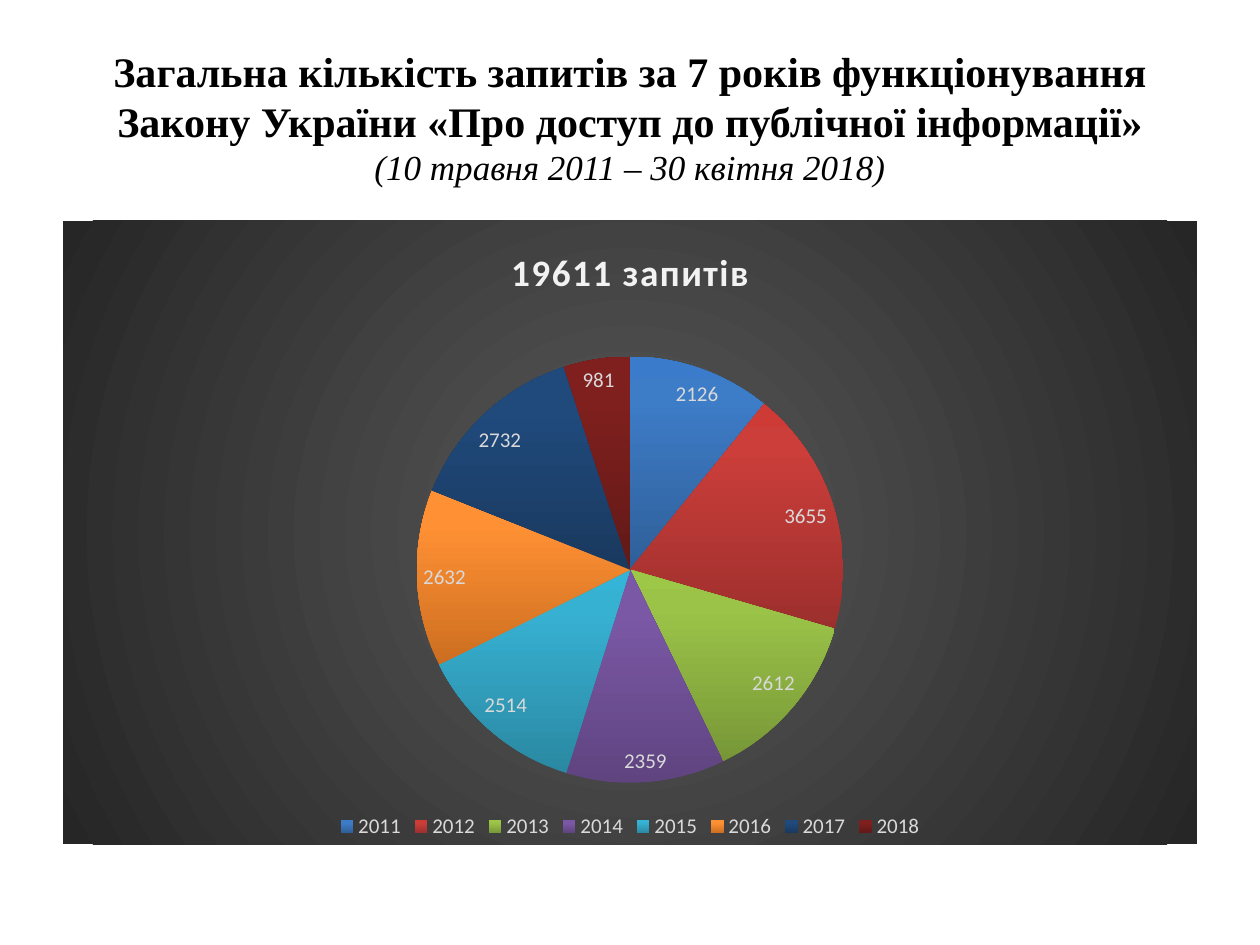
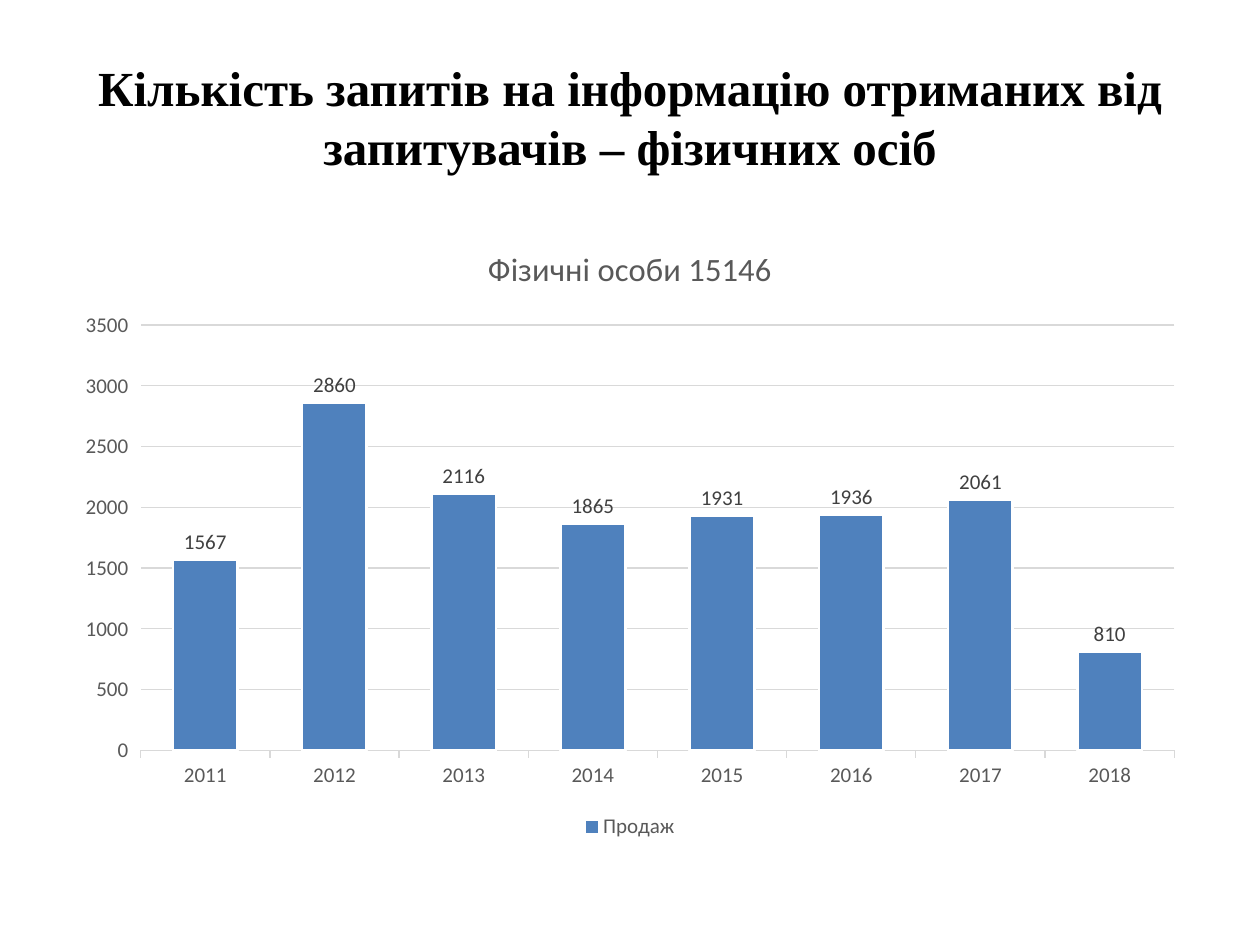
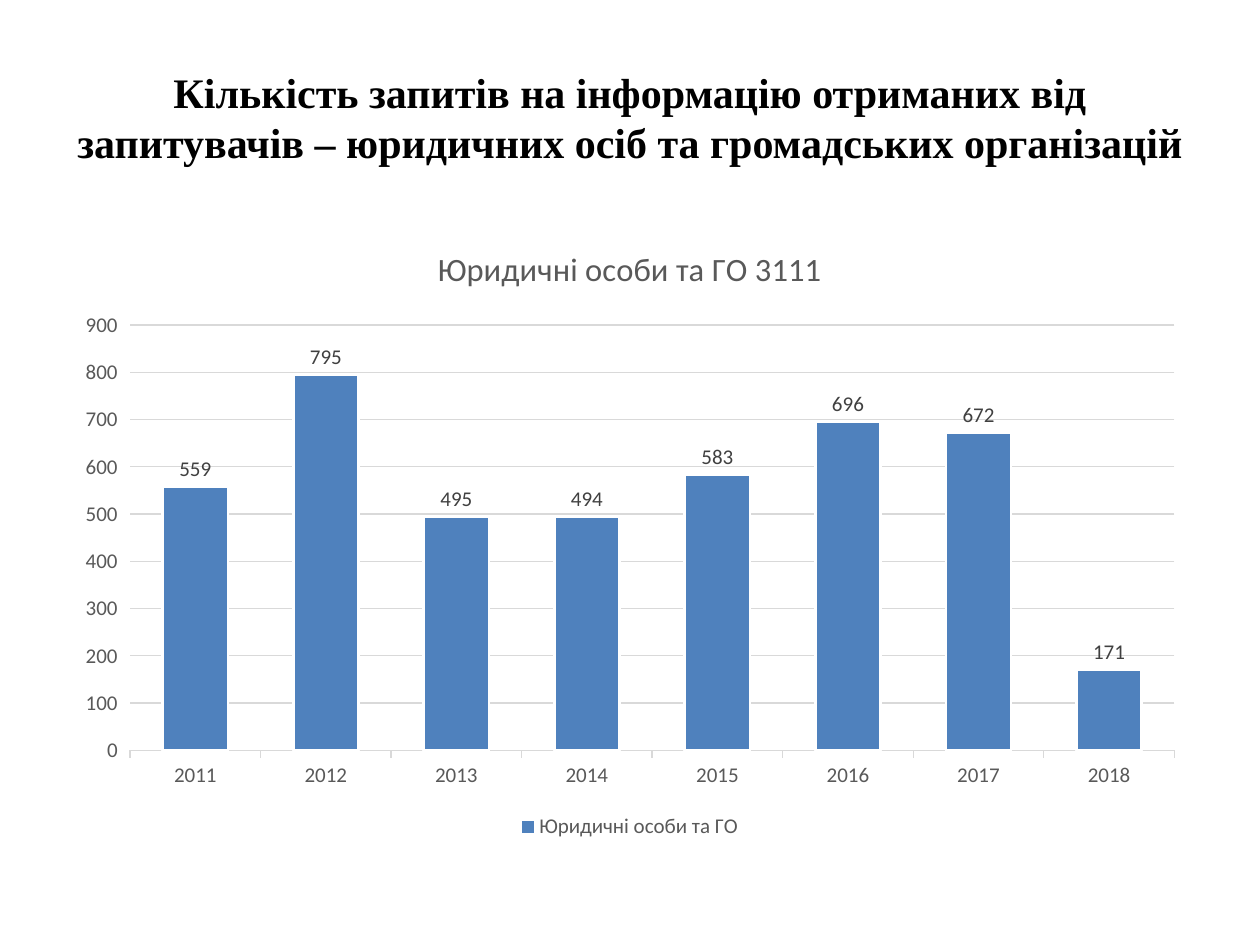
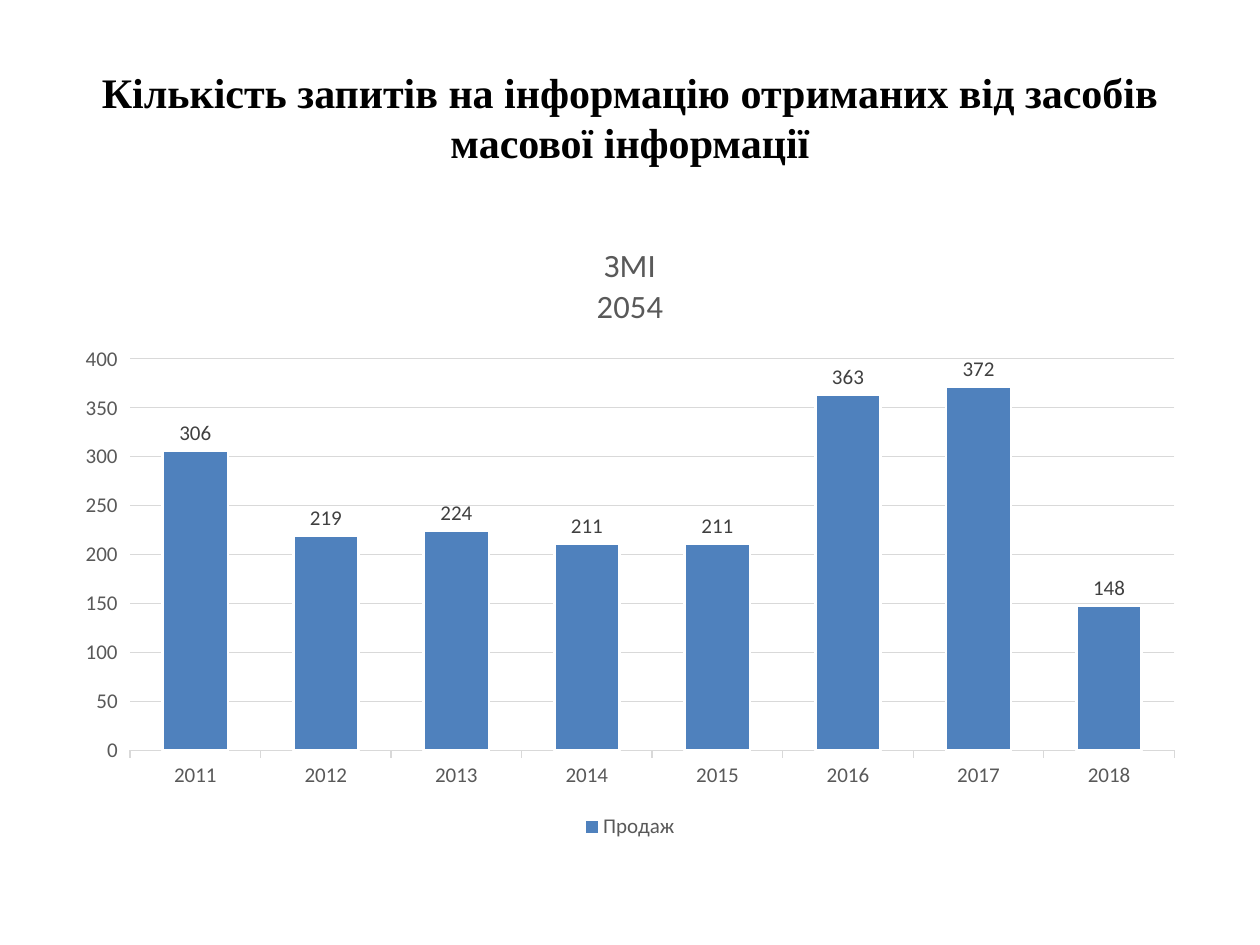
from pptx import Presentation
from pptx.chart.data import CategoryChartData
from pptx.dml.color import RGBColor
from pptx.enum.chart import (XL_CHART_TYPE, XL_LABEL_POSITION,
                             XL_LEGEND_POSITION, XL_TICK_MARK)
from pptx.enum.text import MSO_ANCHOR, PP_ALIGN
from pptx.oxml import parse_xml
from pptx.oxml.ns import nsdecls, qn
from pptx.util import Cm, Pt

HEAD, BODY = "Times New Roman", "Calibri"
BLACK = RGBColor(0, 0, 0)
WHITE = RGBColor(255, 255, 255)
BLUE = RGBColor(0x4F, 0x81, 0xBD)
GRAY = RGBColor(0x59, 0x59, 0x59)
DARK = RGBColor(0x40, 0x40, 0x40)
COAL = RGBColor(0x26, 0x26, 0x26)
RULE = RGBColor(0xD9, 0xD9, 0xD9)
PALE = RGBColor(0xF2, 0xF2, 0xF2)

# Each slice runs from its dark edge through its main tone to its top tone.
SLICES = [[RGBColor.from_string(tone) for tone in row.split()] for row in (
    "2F5F99 3D7CC7 3A7CCB",
    "9C2F2D CB3E3A CE3B37",
    "779737 9BC348 9DC746",
    "5F4480 7B58A6 7C57A8",
    "2A88A2 37B1D2 34B4D6",
    "CC6E20 FF9034 FF9136",
    "19395F 204A7C 1E4A7E",
    "621917 7F201E 811F1C",
)]
STOPS = (0, 80, 100)

YEARS = [str(year) for year in range(2011, 2019)]

TOTAL = {
    "head": "Загальна кількість запитів за 7 років функціонування "
            "Закону України «Про доступ до публічної інформації»",
    "size": 24,
    "dates": "(10 травня 2011 – 30 квітня 2018)",
    "title": ["19611 запитів"],
    "series": "19611 запитів",
    "values": [2126, 3655, 2612, 2359, 2514, 2632, 2732, 981],
}
GROUPS = [
    {
        "head": "Кількість запитів на інформацію отриманих від "
                "запитувачів – фізичних осіб",
        "size": 28,
        "title": ["Фізичні особи 15146"],
        "series": "Продаж",
        "values": [1567, 2860, 2116, 1865, 1931, 1936, 2061, 810],
    },
    {
        "head": "Кількість запитів на інформацію отриманих від запитувачів "
                "– юридичних осіб та громадських організацій",
        "size": 24,
        "title": ["Юридичні особи та ГО 3111"],
        "series": "Юридичні особи та ГО",
        "values": [559, 795, 495, 494, 583, 696, 672, 171],
    },
    {
        "head": "Кількість запитів на інформацію отриманих від засобів "
                "масової інформації",
        "size": 24,
        "title": ["ЗМІ", "2054"],
        "series": "Продаж",
        "values": [306, 219, 224, 211, 211, 363, 372, 148],
    },
]

WIDE, HIGH = Cm(25.4), Cm(19.05)
EDGE = Cm(1.27)
SPAN = WIDE - 2 * EDGE
HEAD_BOX = EDGE, Cm(0.76), SPAN, Cm(3.18)
PLOT_BOX = EDGE, Cm(4.45), SPAN, Cm(12.57)


def style(font, size, color, name=BODY, bold=False, italic=False):
    font.name, font.size = name, Pt(size)
    font.color.rgb = color
    font.bold, font.italic = bold, italic


def blend(stops, shade):
    """Return a gradient fill; shade is its a:lin or a:path element."""
    marks = "".join(
        f'<a:gs pos="{pos * 1000}"><a:srgbClr val="{color}"/></a:gs>'
        for pos, color in stops)
    return (f'<a:gradFill {nsdecls("a")} rotWithShape="1">'
            f"<a:gsLst>{marks}</a:gsLst>{shade}</a:gradFill>")


def add_head(slide, item):
    box = slide.shapes.title
    box.left, box.top, box.width, box.height = HEAD_BOX
    frame = box.text_frame
    frame.vertical_anchor = MSO_ANCHOR.MIDDLE
    para = frame.paragraphs[0]
    para.alignment = PP_ALIGN.CENTER
    run = para.add_run()
    run.text = item["head"]
    style(run.font, item["size"], BLACK, HEAD, bold=True)
    if "dates" in item:
        para.add_line_break()
        run = para.add_run()
        run.text = item["dates"]
        style(run.font, 20, BLACK, HEAD, italic=True)


def add_title(chart, lines, size, color, bold=False):
    chart.has_title = True
    chart.chart_title.include_in_layout = False
    frame = chart.chart_title.text_frame
    for i, line in enumerate(lines):
        para = frame.add_paragraph() if i else frame.paragraphs[0]
        run = para.add_run()
        run.text = line
        style(run.font, size, color, bold=bold)


def add_plot(deck, item, kind, ink, tint, spot):
    """Add a slide with its head and chart; ink is for legend, tint for labels."""
    slide = deck.slides.add_slide(deck.slide_layouts[5])
    add_head(slide, item)
    data = CategoryChartData()
    data.categories = YEARS
    data.add_series(item["series"], item["values"])
    chart = slide.shapes.add_chart(kind, *PLOT_BOX, data).chart
    style(chart.font, 10, BLACK)
    chart.has_legend = True
    chart.legend.position = XL_LEGEND_POSITION.BOTTOM
    chart.legend.include_in_layout = False
    style(chart.legend.font, 12, ink)
    labels = chart.plots[0].series[0].data_labels
    labels.show_value = True
    labels.position = spot
    style(labels.font, 12, tint)
    return chart


def add_pie(deck, item):
    chart = add_plot(deck, item, XL_CHART_TYPE.PIE, RULE, RULE,
                     XL_LABEL_POSITION.BEST_FIT)
    add_title(chart, item["title"], 21.3, PALE, bold=True)
    run = chart.chart_title.text_frame.paragraphs[0].runs[0]
    run.font._element.set("spc", "100")
    root = chart._chartSpace
    glow = blend([(0, GRAY), (100, COAL)],
                 '<a:path path="circle"><a:fillToRect l="50000" t="50000" '
                 'r="50000" b="50000"/></a:path>')
    root.find(qn("c:chart")).addnext(parse_xml(
        f'<c:spPr {nsdecls("c", "a")}>{glow}<a:ln><a:noFill/></a:ln></c:spPr>'))
    plot = chart.plots[0]
    plot.vary_by_categories = True
    points = plot.series[0].points
    for i, tones in enumerate(SLICES):
        points[i].format.fill.background()
        points[i].format.line.fill.background()
    for part, tones in zip(root.iter(qn("c:dPt")), SLICES):
        props = part.find(qn("c:spPr"))
        fill = blend(zip(STOPS, tones), '<a:lin ang="16200000" scaled="0"/>')
        props.replace(props.find(qn("a:noFill")), parse_xml(fill))


def add_bars(deck, item):
    chart = add_plot(deck, item, XL_CHART_TYPE.COLUMN_CLUSTERED, GRAY, DARK,
                     XL_LABEL_POSITION.OUTSIDE_END)
    add_title(chart, item["title"], 18.6, GRAY)
    plot = chart.plots[0]
    plot.vary_by_categories = False
    plot.gap_width = 100
    bars = plot.series[0].format
    bars.fill.solid()
    bars.fill.fore_color.rgb = BLUE
    bars.line.color.rgb = WHITE
    bars.line.width = Pt(1.5)
    years, scale = chart.category_axis, chart.value_axis
    for axis in (years, scale):
        axis.major_tick_mark = XL_TICK_MARK.OUTSIDE
        style(axis.tick_labels.font, 12, GRAY)
    scale.has_major_gridlines = True
    for line in (years.format.line, scale.major_gridlines.format.line):
        line.color.rgb = RULE
        line.width = Pt(0.75)
    scale.format.line.fill.background()


def main():
    deck = Presentation()
    deck.slide_width, deck.slide_height = WIDE, HIGH
    add_pie(deck, TOTAL)
    for group in GROUPS:
        add_bars(deck, group)
    deck.save("out.pptx")


if __name__ == "__main__":
    main()
